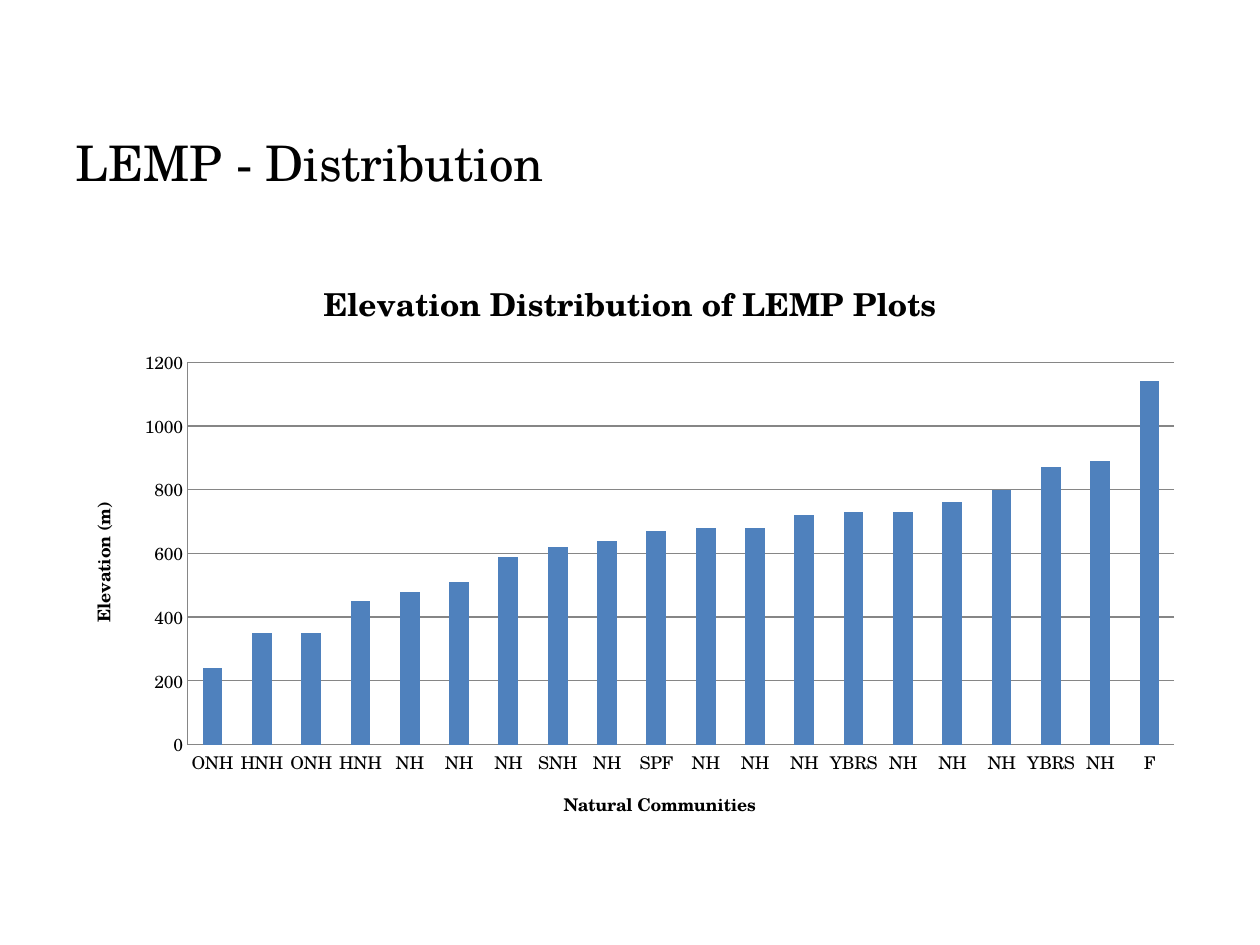
from pptx import Presentation
from pptx.chart.data import CategoryChartData
from pptx.dml.color import RGBColor
from pptx.enum.chart import XL_CHART_TYPE, XL_TICK_MARK
from pptx.enum.text import MSO_ANCHOR, PP_ALIGN
from pptx.util import Emu, Pt

COMMUNITIES = ["ONH", "HNH", "ONH", "HNH", "NH", "NH", "NH", "SNH", "NH", "SPF",
               "NH", "NH", "NH", "YBRS", "NH", "NH", "NH", "YBRS", "NH", "F"]
ELEVATIONS = [240, 350, 350, 450, 480, 510, 590, 620, 640, 670,
              680, 680, 720, 730, 730, 760, 800, 870, 890, 1140]


def px(length):
    return Emu(round(length * 914400 / 126))


def rgb(value):
    return RGBColor.from_string(value)


def style_font(font, size, bold, color, face):
    font.name = face
    font.size = Pt(size)
    font.bold = bold
    font.color.rgb = rgb(color)


def write_text(frame, text, *, size, bold=False, color="000000",
               face="TeX Gyre Schola", align=PP_ALIGN.CENTER):
    paragraph = frame.paragraphs[0]
    paragraph.alignment = align
    run = paragraph.add_run()
    run.text = text
    style_font(run.font, size, bold, color, face)


class SlideBuilder:
    face = "TeX Gyre Schola"
    ink = "000000"
    bar = "4F81BD"
    rule = "868686"

    def __init__(self, slide):
        self.slide = slide

    def title(self, text, left, top, width, height):
        heading = self.slide.shapes.title
        heading.left, heading.top = px(left), px(top)
        heading.width, heading.height = px(width), px(height)
        heading.text_frame.vertical_anchor = MSO_ANCHOR.TOP
        write_text(heading.text_frame, text, size=28, align=PP_ALIGN.LEFT)

    def axis(self, axis, caption):
        write_text(axis.axis_title.text_frame, caption, size=10, bold=True)
        axis.major_tick_mark = XL_TICK_MARK.NONE
        axis.minor_tick_mark = XL_TICK_MARK.NONE
        self.line(axis.format.line)

    def line(self, line):
        line.color.rgb = rgb(self.rule)
        line.width = Pt(0.75)

    def column_chart(self, heading, categories, values, captions,
                     left, top, width, height):
        data = CategoryChartData()
        data.categories = categories
        data.add_series("Series 1", values)
        chart = self.slide.shapes.add_chart(
            XL_CHART_TYPE.COLUMN_CLUSTERED, px(left), px(top),
            px(width), px(height), data).chart
        style_font(chart.font, 10, False, self.ink, self.face)
        chart.has_legend = False
        chart.has_title = True
        write_text(chart.chart_title.text_frame, heading, size=18, bold=True)
        chart.chart_title.include_in_layout = False

        for axis, caption in zip((chart.category_axis, chart.value_axis), captions):
            self.axis(axis, caption)
        chart.value_axis.minimum_scale = 0
        chart.value_axis.maximum_scale = 1200
        chart.value_axis.major_unit = 200
        chart.value_axis.has_major_gridlines = True
        self.line(chart.value_axis.major_gridlines.format.line)

        plot = chart.plots[0]
        plot.gap_width = 150
        plot.vary_by_categories = False
        columns = plot.series[0].format.fill
        columns.solid()
        columns.fore_color.rgb = rgb(self.bar)


def main():
    deck = Presentation()
    deck.slide_width, deck.slide_height = px(1260), px(945)
    builder = SlideBuilder(deck.slides.add_slide(deck.slide_layouts[5]))
    builder.title("LEMP - Distribution", 63, 126, 1134, 126)
    builder.column_chart("Elevation Distribution of LEMP Plots",
                         COMMUNITIES, ELEVATIONS,
                         ("Natural Communities", "Elevation (m)"),
                         63, 252, 1134, 592)
    deck.save("out.pptx")


if __name__ == "__main__":
    main()
